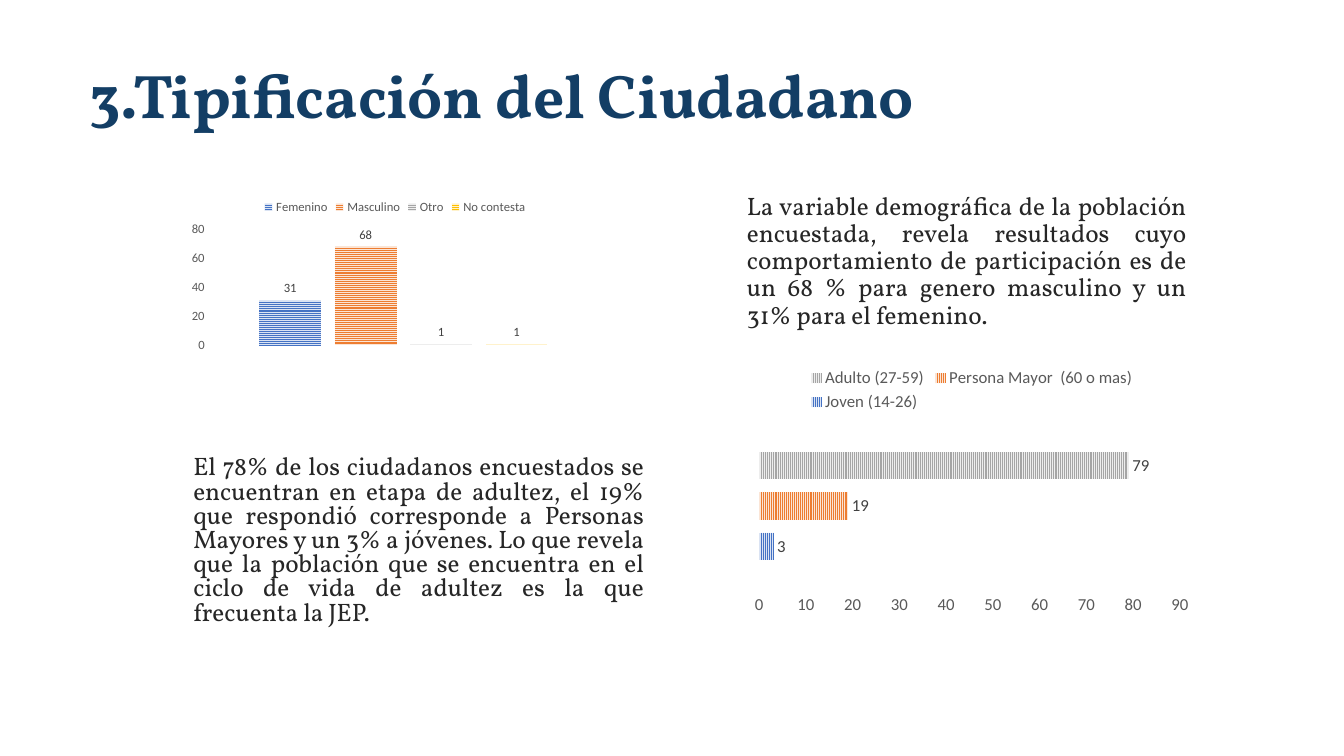
import lxml.etree
import pptx
import pptx.chart.data
import pptx.dml.color
import pptx.enum.chart
import pptx.enum.dml
import pptx.enum.text
import pptx.oxml.ns
import pptx.util

Pt = pptx.util.Pt
Align = pptx.enum.text.PP_ALIGN
Anchor = pptx.enum.text.MSO_ANCHOR
ChartType = pptx.enum.chart.XL_CHART_TYPE
Pattern = pptx.enum.dml.MSO_PATTERN

BLUE = ("4472C4", "DAE3F3")
ORANGE = ("ED7D31", "FBE5D6")
GREY = ("A5A5A5", "EDEDED")
YELLOW = ("FFC000", "FFF2CC")


def color(hex_string):
    return pptx.dml.color.RGBColor.from_string(hex_string)


def apply(target, values):
    for name, value in values.items():
        setattr(target, name, value)


class SlideBuilder:
    text_font = "Vollkorn"
    chart_font = "Calibri"
    title_color = "133E65"
    body_color = "262626"
    axis_color = "595959"
    label_color = "404040"

    def __init__(self, slide):
        self.slide = slide

    def style_font(self, font, name, size, hex_string, bold=False):
        apply(font, {"name": name, "size": Pt(size), "bold": bold})
        font.color.rgb = color(hex_string)

    def fill_text(self, shape, box, text, size, hex_string, anchor, paragraph_format, bold=False):
        apply(shape, dict(zip(("left", "top", "width", "height"), map(Pt, box))))
        frame = shape.text_frame
        apply(frame, {"word_wrap": True, "vertical_anchor": anchor,
                      "auto_size": pptx.enum.text.MSO_AUTO_SIZE.NONE})
        frame.text = text
        paragraph = frame.paragraphs[0]
        apply(paragraph, paragraph_format)
        properties = paragraph._p.get_or_add_pPr()
        for name in ("marL", "indent"):
            properties.set(name, "0")
        lxml.etree.SubElement(properties, pptx.oxml.ns.qn("a:buNone"))
        self.style_font(paragraph.runs[0].font, self.text_font, size, hex_string, bold)

    def title(self, box, text):
        self.fill_text(self.slide.shapes.title, box, text, 44, self.title_color, Anchor.MIDDLE,
                       {"alignment": Align.CENTER, "line_spacing": 0.9}, bold=True)

    def justified(self, shape, box, text, line_spacing):
        self.fill_text(shape, box, text, 18, self.body_color, Anchor.TOP,
                       {"alignment": Align.JUSTIFY, "line_spacing": line_spacing,
                        "space_before": Pt(0)})

    def body(self, box, text):
        self.justified(self.slide.placeholders[1], box, text, 0.9)

    def text_box(self, box, text):
        shape = self.slide.shapes.add_textbox(*map(Pt, box))
        self.justified(shape, box, text, 0.8)

    def chart(self, box, kind, series_rows, pattern, size, plot_format, scale):
        """Add a one-category chart; series_rows holds name, value and pattern colours."""
        data = pptx.chart.data.CategoryChartData()
        data.categories = ["1"]
        for name, value, _ in series_rows:
            data.add_series(name, [value])
        chart = self.slide.shapes.add_chart(kind, *map(Pt, box), data).chart
        apply(chart, {"has_title": False, "has_legend": True})
        self.style_font(chart.font, self.chart_font, 10, "000000")

        apply(chart.legend, {"position": pptx.enum.chart.XL_LEGEND_POSITION.TOP,
                             "include_in_layout": False})
        self.style_font(chart.legend.font, self.chart_font, size, self.axis_color)

        chart.category_axis.visible = False
        axis = chart.value_axis
        no_tick = pptx.enum.chart.XL_TICK_MARK.NONE
        apply(axis, {"has_major_gridlines": False, "major_tick_mark": no_tick,
                     "minor_tick_mark": no_tick, "minimum_scale": 0} | scale)
        axis.format.line.fill.background()
        self.style_font(axis.tick_labels.font, self.chart_font, size, self.axis_color)

        plot = chart.plots[0]
        apply(plot, {"vary_by_categories": False} | plot_format)
        for series, (_, _, (foreground, background)) in zip(plot.series, series_rows):
            series.invert_if_negative = False
            fill = series.format.fill
            fill.patterned()
            fill.pattern = pattern
            fill.fore_color.rgb = color(foreground)
            fill.back_color.rgb = color(background)
            series.format.line.fill.background()
            labels = series.data_labels
            apply(labels, {"show_value": True,
                           "position": pptx.enum.chart.XL_LABEL_POSITION.OUTSIDE_END})
            self.style_font(labels.font, self.chart_font, size, self.label_color)


def main():
    presentation = pptx.Presentation()
    apply(presentation, {"slide_width": Pt(960), "slide_height": Pt(540)})
    builder = SlideBuilder(presentation.slides.add_slide(presentation.slide_layouts[1]))

    builder.title((54, 18, 618, 104.4), "3.Tipificación del Ciudadano ")
    builder.body((526.3, 134.6, 328.3, 119.5),
                 "La variable demográfica de la población encuestada, revela resultados cuyo "
                 "comportamiento de participación es de un 68 % para genero masculino y un 31% "
                 "para el femenino.")
    builder.chart((131, 134.6, 302.4, 119.5), ChartType.COLUMN_CLUSTERED,
                  [("Femenino", 31, BLUE), ("Masculino", 68, ORANGE),
                   ("Otro", 1, GREY), ("No contesta", 1, YELLOW)],
                  Pattern.NARROW_HORIZONTAL, 9, {"gap_width": 164, "overlap": -22},
                  {"maximum_scale": 80, "major_unit": 20})
    builder.text_box((131, 322.6, 336.2, 141.8),
                     "El 78% de los ciudadanos encuestados se encuentran en etapa de adultez, el "
                     "19% que respondió corresponde a Personas Mayores y un 3% a jóvenes. Lo que "
                     "revela que la población que se encuentra en el ciclo de vida de adultez es "
                     "la que frecuenta la JEP.")
    builder.chart((532.8, 254.9, 322.6, 187.9), ChartType.BAR_CLUSTERED,
                  [("Joven (14-26)", 3, BLUE), ("Persona Mayor  (60 o mas)", 19, ORANGE),
                   ("Adulto (27-59)", 79, GREY)],
                  Pattern.NARROW_VERTICAL, 12, {"gap_width": 227, "overlap": -48},
                  {"maximum_scale": 90, "major_unit": 10})
    presentation.save("out.pptx")


if __name__ == "__main__":
    main()
